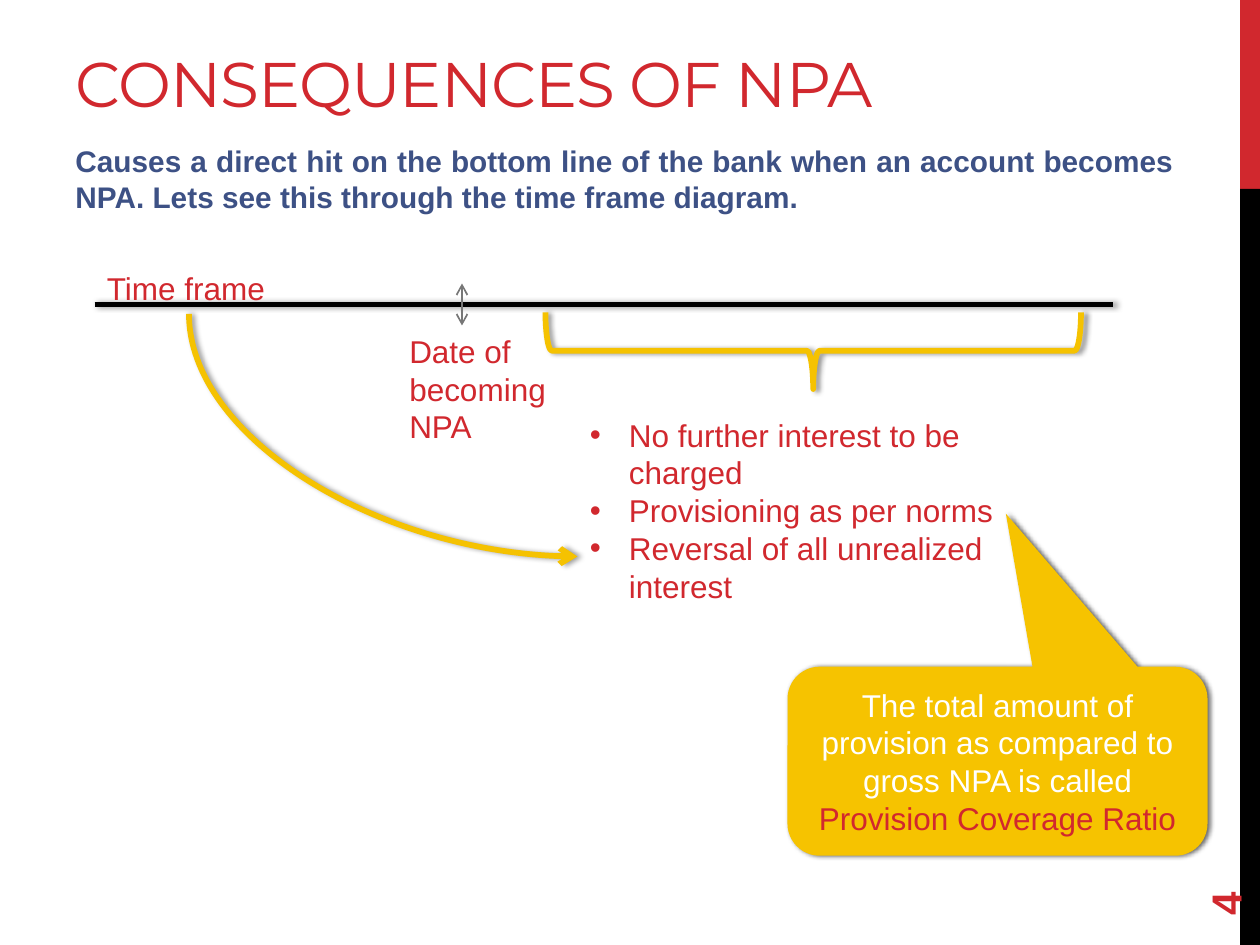
from lxml.etree import SubElement as Sub
from pptx import Presentation
from pptx.dml.color import RGBColor as RGB
from pptx.enum.shapes import MSO_CONNECTOR as Conn, MSO_SHAPE as Kind
from pptx.enum.text import MSO_ANCHOR as Anchor, PP_ALIGN as Align
from pptx.oxml.ns import qn
from pptx.util import Emu, Inches, Pt

RED = RGB(0xD1, 0x28, 0x2E)
BLACK = RGB(0, 0, 0)
WHITE = RGB(0xFF, 0xFF, 0xFF)
NAVY = RGB(0x3D, 0x51, 0x85)
GREY = RGB(0x77, 0x77, 0x77)
GOLD = RGB(0xF5, 0xC2, 0x01)
AMBER = RGB(0xF6, 0xC3, 0x00)
COLS, ROWS = 120, 90
THICK = 3.25


class Deck:
    """Holds the style and the slide; lengths are cells of a 120 by 90 grid."""
    font, size, color = "Arial", 18, RED

    def __init__(self):
        self.prs = Presentation()
        self.prs.slide_width, self.prs.slide_height = Inches(10), Inches(7.5)
        self.slide = self.prs.slides.add_slide(self.prs.slide_layouts[6])
        self.items = self.slide.shapes

    def grid(self, x, y, *size):
        """Turn x, y and, if given, width and height into lengths."""
        col, row = self.prs.slide_width / COLS, self.prs.slide_height / ROWS
        return [Emu(round(n * unit)) for n, unit in zip((x, y, *size), (col, row) * 2)]

    def shade(self, item, alpha=40, blur=3.1, dist=1.8):
        """Give an item whose line is already set an outer shadow."""
        effect = item.element.spPr.find(qn("a:effectLst"))
        outer = Sub(effect, qn("a:outerShdw"), blurRad=str(Pt(blur)),
                    dist=str(Pt(dist)), dir="0", algn="tl", rotWithShape="0")
        tint = Sub(outer, qn("a:srgbClr"), val=str(BLACK))
        Sub(tint, qn("a:alpha"), val=str(alpha * 1000))

    def fill_par(self, par, *runs, size=None, font=None, bold=False):
        """Add (words, colour) runs to a paragraph."""
        for words, color in runs:
            run = par.add_run()
            run.text = words
            face = run.font
            face.name, face.size, face.bold = font or self.font, Pt(size or self.size), bold
            face.color.rgb = color
        return par

    def text(self, box, *lines, color=None, anchor=Anchor.TOP, turn=0, **style):
        item = self.items.add_textbox(*self.grid(*box))
        item.rotation = turn
        frame = item.text_frame
        frame.word_wrap, frame.vertical_anchor = True, anchor
        pars = [frame.paragraphs[0]] + [frame.add_paragraph() for _ in lines[1:]]
        for par, words in zip(pars, lines):
            self.fill_par(par, (words, color or self.color), **style)
        return pars

    def bullets(self, box, *lines):
        for par in self.text(box, *lines):
            props = par._p.get_or_add_pPr()
            props.set("marL", str(Inches(0.31)))
            props.set("indent", str(Inches(-0.31)))
            Sub(props, qn("a:buFont"), typeface=self.font)
            Sub(props, qn("a:buChar"), char="•")

    def shape(self, kind, box, fill=None, line=None, turn=0):
        item = self.items.add_shape(kind, *self.grid(*box))
        item.shadow.inherit = False
        item.rotation = turn
        if fill is None:
            item.fill.background()
        else:
            item.fill.solid()
            item.fill.fore_color.rgb = fill
        if line is None:
            item.line.fill.background()
        else:
            item.line.color.rgb, item.line.width = line, Pt(THICK)
        return item

    def line(self, start, end, color, width=THICK, ends=(), kind=Conn.STRAIGHT):
        item = self.items.add_connector(kind, *self.grid(*start), *self.grid(*end))
        item.line.color.rgb, item.line.width = color, Pt(width)
        for tag in ends:
            Sub(item.element.spPr.find(qn("a:ln")), qn(tag), type="arrow")
        Sub(item.element.spPr, qn("a:effectLst"))
        return item

    def swoop(self, start, end, color):
        """Draw a quarter curve that leaves downwards and arrives rightwards."""
        item = self.line(start, end, color, ends=["a:tailEnd"], kind=Conn.CURVE)
        wide, high = item.width, item.height
        shift = (wide - high) // 2
        item.left, item.top = item.left + shift, item.top - shift
        item.width, item.height = high, wide
        props = item.element.spPr
        props.find(qn("a:prstGeom")).set("prst", "curvedConnector2")
        frame = props.find(qn("a:xfrm"))
        frame.set("rot", "16200000")
        frame.set("flipH", "1")
        return item


def main():
    deck = Deck()
    edge = 118.1
    deck.shape(Kind.RECTANGLE, (edge, 0, COLS - edge, 18), RED)
    deck.shape(Kind.RECTANGLE, (edge, 18, COLS - edge, 72), BLACK)

    title, = deck.text((6, 2, 96, 10), "CONSEQUENCES OF NPA", size=36,
                       font="Montserrat", anchor=Anchor.BOTTOM)
    title.runs[0]._r.get_or_add_rPr().set("spc", "-60")
    lead, = deck.text((6, 13, 107, 12), "Causes a direct hit on the bottom line of the bank "
                      "when an account becomes NPA. Lets see this through the time frame diagram.",
                      color=NAVY, size=17, bold=True)
    lead.alignment = Align.JUSTIFY
    lead.space_before, lead.space_after = Pt(3.4), Pt(6)
    deck.text((108, 77.3, 17.3, 4.8), "4", size=24, bold=True,
              anchor=Anchor.MIDDLE, turn=270)

    deck.shade(deck.line((9, 29), (106, 29), BLACK))
    deck.line((44, 27), (44, 31), GREY, 1, ["a:headEnd", "a:tailEnd"])
    deck.text((37.8, 31, 17.3, 12.1), "Date of becoming NPA")
    brace = deck.shape(Kind.LEFT_BRACE, (73.8, 7.9, 7.3, 51), line=GOLD, turn=270)
    deck.shade(brace)
    deck.bullets((55, 39, 48, 19.5), "No further interest to be charged",
                 "Provisioning as per norms", "Reversal of all unrealized interest")
    deck.text((9, 25, 18, 4.8), "Time frame")
    deck.shade(deck.swoop((18, 29.9), (55, 53), GOLD))

    note = deck.shape(Kind.ROUNDED_RECTANGULAR_CALLOUT, (75, 63.5, 40, 18), AMBER)
    for spot, value in enumerate((0.02, -1.31, 0.17)):
        note.adjustments[spot] = value
    deck.shade(note, 60, 3, 1.5)
    frame = note.text_frame
    frame.word_wrap, frame.vertical_anchor = True, Anchor.MIDDLE
    par = deck.fill_par(frame.paragraphs[0],
                        ("The total amount of provision as compared to gross NPA is called ", WHITE),
                        ("Provision Coverage Ratio", RED))
    par.alignment = Align.CENTER

    deck.prs.save("out.pptx")


if __name__ == "__main__":
    main()
